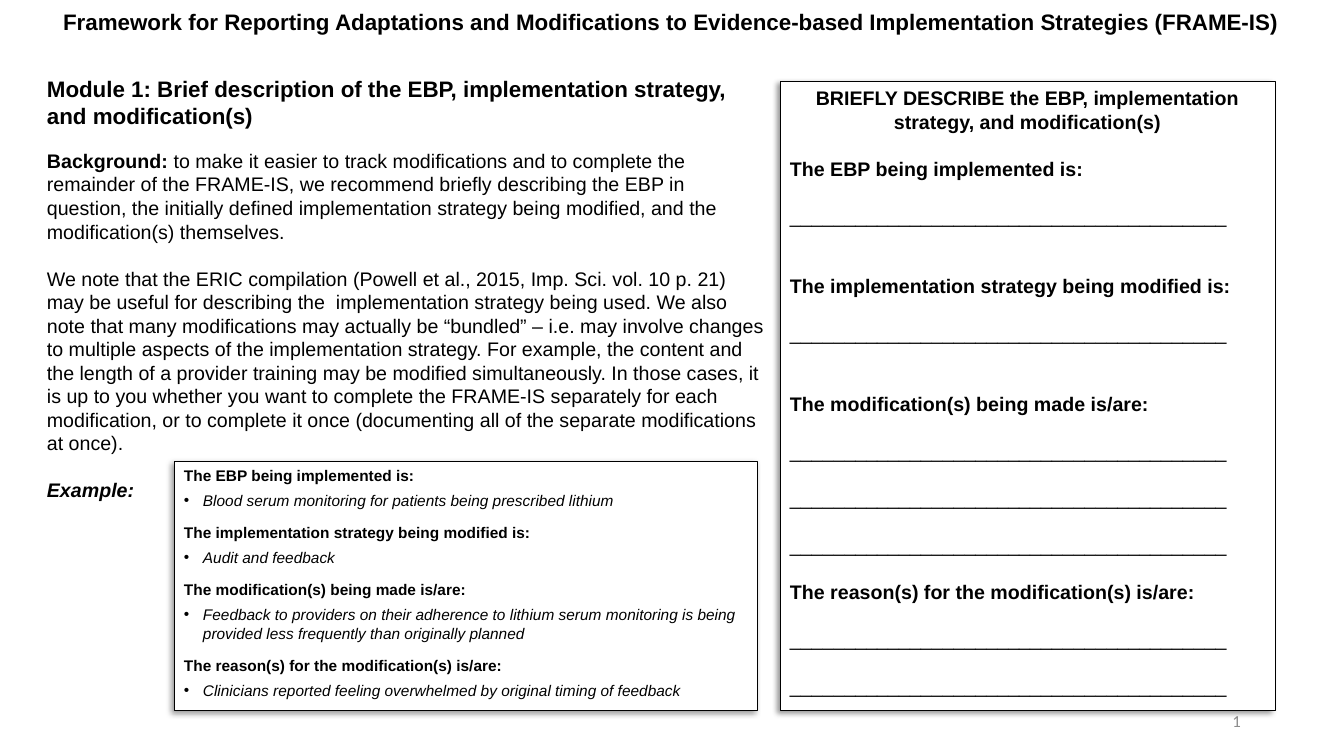
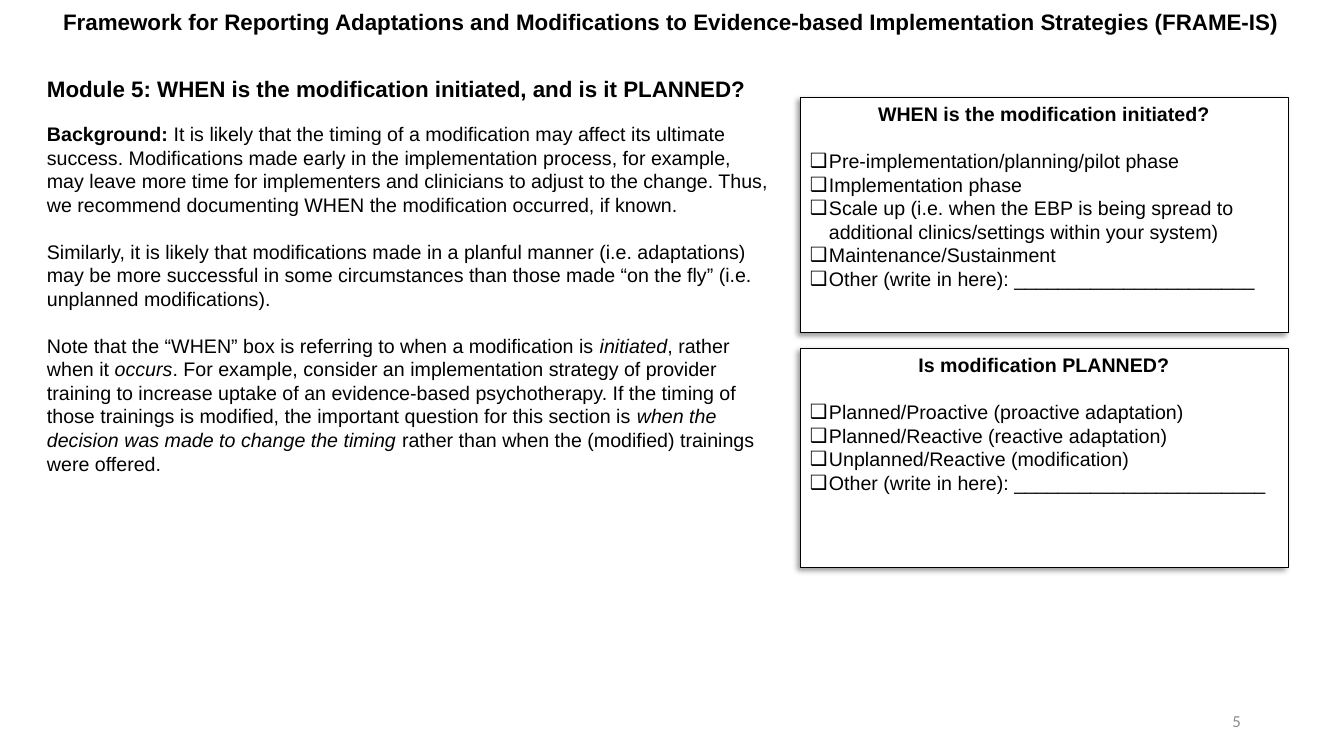
import pptx
import pptx.util
import pptx.dml.color
import pptx.enum.shapes
import pptx.enum.text
import pptx.oxml.ns
from lxml import etree

PX = 12192000 / 1344
ALIGN = pptx.enum.text.PP_ALIGN
ANCHOR = pptx.enum.text.MSO_ANCHOR
AUTO_SIZE = pptx.enum.text.MSO_AUTO_SIZE
PLAIN = {"bold": False, "italic": False}
BOLD = {"bold": True, "italic": False}
ITALIC = {"bold": False, "italic": True}
BOLD_ITALIC = {"bold": True, "italic": True}
BLANK_LINE = "_" * 40
FRAMEWORK = ("Framework for Reporting Adaptations and Modifications to "
             "Evidence-based Implementation Strategies (FRAME-IS)")


def px(length):
    return pptx.util.Emu(round(length * PX))


def color(value):
    return pptx.dml.color.RGBColor.from_string(value)


def assign(target, values):
    for name, value in values.items():
        setattr(target, name, value)


def add_xml(parent, tag, **attributes):
    element = etree.SubElement(parent, pptx.oxml.ns.qn(tag))
    for name, value in attributes.items():
        element.set(name, str(value))
    return element


def line(text, style=PLAIN, **options):
    return {"spans": [(text, style)], **options}


class FormDeck:
    """Hold the form's style and the slide being built."""

    font = "Arial"
    black, white, gray = "000000", "FFFFFF", "8C8C8C"
    heading_size, body_size, example_size, number_size = 16, 14, 11, 12
    line_factor = 1.2
    bullet_indent = 19

    def __init__(self):
        self.deck = pptx.Presentation()
        assign(self.deck, {"slide_width": px(1344), "slide_height": px(756)})
        self.slide = None

    def start_slide(self, number):
        self.slide = self.deck.slides.add_slide(self.deck.slide_layouts[6])
        self.text((26, 3, 1290, 37), [line(FRAMEWORK, BOLD, align=ALIGN.CENTER)],
                  self.heading_size)
        box = self.text((949, 701, 302, 40), [line(str(number), align=ALIGN.RIGHT)],
                        self.number_size, "Calibri", self.gray)
        assign(box.text_frame, {"auto_size": AUTO_SIZE.NONE, "vertical_anchor": ANCHOR.MIDDLE})

    def text(self, place, lines, size, font=font, ink=black):
        box = self.slide.shapes.add_textbox(*map(px, place))
        assign(box.text_frame, {"word_wrap": True, "auto_size": AUTO_SIZE.SHAPE_TO_FIT_TEXT})
        self.fill_text(box.text_frame, lines, size, font, ink)
        return box

    def panel(self, place, lines, size=body_size):
        box = self.slide.shapes.add_shape(
            pptx.enum.shapes.MSO_SHAPE.RECTANGLE, *map(px, place))
        box.fill.solid()
        box.fill.fore_color.rgb = color(self.white)
        box.line.color.rgb = color(self.black)
        box.line.width = pptx.util.Pt(0.5)
        self.add_shadow(box)
        assign(box.text_frame, {"word_wrap": True, "vertical_anchor": ANCHOR.TOP})
        self.fill_text(box.text_frame, lines, size, self.font, self.black)

    def add_shadow(self, box):
        box.shadow.inherit = False
        effects = box._element.spPr.find(pptx.oxml.ns.qn("a:effectLst"))
        shadow = add_xml(effects, "a:outerShdw", blurRad=pptx.util.Pt(4),
                         dist=pptx.util.Pt(3), dir=135 * 60000, algn="tr", rotWithShape=0)
        add_xml(add_xml(shadow, "a:srgbClr", val=self.black), "a:alpha", val=40000)

    def fill_text(self, frame, lines, size, font, ink):
        for index, item in enumerate(lines):
            para = frame.add_paragraph() if index else frame.paragraphs[0]
            line_size = item.get("size", size)
            assign(para, {
                "alignment": item.get("align", ALIGN.LEFT),
                "line_spacing": pptx.util.Pt(line_size * self.line_factor),
                "space_before": pptx.util.Pt(item.get("gap", 0) * self.line_factor),
            })
            if "bullet" in item:
                self.add_bullet(para, item["bullet"])
            for words, style in item["spans"]:
                span = para.add_run()
                span.text = words
                assign(span.font, {"name": font, "size": pptx.util.Pt(line_size), **style})
                span.font.color.rgb = color(ink)

    def add_bullet(self, para, mark):
        properties = para._p.get_or_add_pPr()
        properties.set("marL", str(px(self.bullet_indent)))
        properties.set("indent", str(-px(self.bullet_indent)))
        add_xml(properties, "a:buFont", typeface=self.font)
        add_xml(properties, "a:buChar", char=mark)

    def module(self, height, heading, background, *rest):
        lines = [
            line(heading, BOLD, size=self.heading_size),
            {"spans": [("Background: ", BOLD), (background, PLAIN)], "gap": 12},
            *rest,
        ]
        self.text((37, 70, 742, height), lines, self.body_size)

    def checklist(self, place, heading, choices):
        lines = [line(heading, BOLD, align=ALIGN.CENTER)]
        lines += [line(choice, bullet="❑", gap=0 if index else 14)
                  for index, choice in enumerate(choices)]
        self.panel(place, lines)

    def save(self):
        self.deck.save("out.pptx")


def build_description(form):
    form.start_slide(1)
    form.module(
        455,
        "Module 1: Brief description of the EBP, implementation strategy, and modification(s)",
        "to make it easier to track modifications and to complete the remainder of the "
        "FRAME-IS, we recommend briefly describing the EBP in question, the initially defined "
        "implementation strategy being modified, and the modification(s) themselves.",
        line("We note that the ERIC compilation (Powell et al., 2015, Imp. Sci. vol. 10 p. 21) "
             "may be useful for describing the  implementation strategy being used. We also "
             "note that many modifications may actually be “bundled” – i.e. may involve changes "
             "to multiple aspects of the implementation strategy. For example, the content and "
             "the length of a provider training may be modified simultaneously. In those cases, "
             "it is up to you whether you want to complete the FRAME-IS separately for each "
             "modification, or to complete it once (documenting all of the separate "
             "modifications at once).", gap=14),
        line("Example:", BOLD_ITALIC, gap=14),
    )
    prompts = [
        ("The EBP being implemented is:", 14, 1,
         "Blood serum monitoring for patients being prescribed lithium"),
        ("The implementation strategy being modified is:", 28, 1, "Audit and feedback"),
        ("The modification(s) being made is/are:", 28, 3,
         "Feedback to providers on their adherence to lithium serum monitoring is being "
         "provided less frequently than originally planned"),
        ("The reason(s) for the modification(s) is/are:", 14, 2,
         "Clinicians reported feeling overwhelmed by original timing of feedback"),
    ]
    blanks = [line("BRIEFLY DESCRIBE the EBP, implementation strategy, and modification(s)",
                   BOLD, align=ALIGN.CENTER)]
    examples = []
    for prompt, gap, count, answer in prompts:
        blanks.append(line(prompt, BOLD, gap=gap))
        blanks += [line(BLANK_LINE, gap=14)] * count
        examples.append(line(prompt, BOLD, gap=8 if examples else 0))
        examples.append(line(answer, ITALIC, gap=4, bullet="•"))
    form.panel((780, 81, 495, 629), blanks)
    form.panel((174, 461, 583, 249), examples, form.example_size)


def build_timing(form):
    form.start_slide(5)
    form.module(
        427,
        "Module 5: WHEN is the modification initiated, and is it PLANNED?",
        "It is likely that the timing of a modification may affect its ultimate success. "
        "Modifications made early in the implementation process, for example, may leave more "
        "time for implementers and clinicians to adjust to the change. Thus, we recommend "
        "documenting WHEN the modification occurred, if known.",
        line("Similarly, it is likely that modifications made in a planful manner (i.e. "
             "adaptations) may be more successful in some circumstances than those made “on "
             "the fly” (i.e. unplanned modifications).", gap=14),
        {"gap": 14, "spans": [
            ("Note that the “WHEN” box is referring to when a modification is ", PLAIN),
            ("initiated", ITALIC),
            (", rather when it ", PLAIN),
            ("occurs", ITALIC),
            (". For example, consider an implementation strategy of provider training to "
             "increase uptake of an evidence-based psychotherapy. If the timing of those "
             "trainings is modified, the important question for this section is ", PLAIN),
            ("when the decision was made to change the timing ", ITALIC),
            ("rather than when the (modified) trainings were offered.", PLAIN),
        ]},
    )
    form.checklist((800, 97, 488, 235), "WHEN is the modification initiated?", [
        "Pre-implementation/planning/pilot phase",
        "Implementation phase",
        "Scale up (i.e. when the EBP is being spread to additional clinics/settings "
        "within your system)",
        "Maintenance/Sustainment",
        "Other (write in here): " + "_" * 22,
    ])
    form.checklist((800, 348, 488, 219), "Is modification PLANNED?", [
        "Planned/Proactive (proactive adaptation)",
        "Planned/Reactive (reactive adaptation)",
        "Unplanned/Reactive (modification)",
        "Other (write in here): " + "_" * 23,
    ])


def main():
    form = FormDeck()
    build_description(form)
    build_timing(form)
    form.save()


if __name__ == "__main__":
    main()
